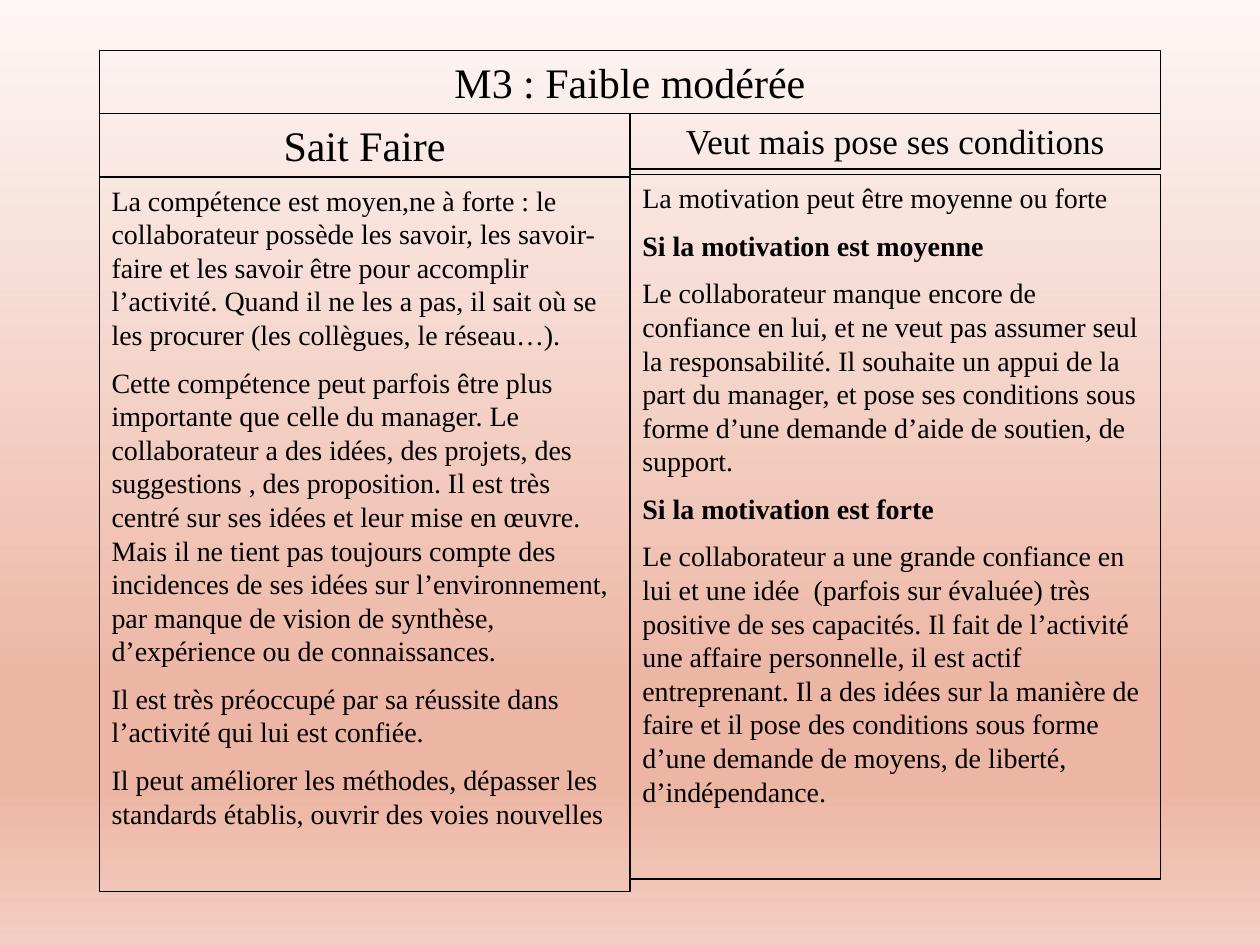
from lxml import etree
from pptx import Presentation, util as u
from pptx.enum import shapes, text
from pptx.dml.color import RGBColor
from pptx.oxml.ns import qn

COLORS = {"ink": "000000", "top": "FDF7F5", "band": "EDB5A4", "bottom": "F3CEC2"}
STOPS = [(0, "top"), (74, "band"), (83, "band"), (100, "bottom")]
FONT = "Times New Roman"

TITLE = "M3 : Faible modérée"
# Each column: heading, heading size, heading height, body top, body height, (text, bold) paragraphs
COLUMNS = [
    ("Sait Faire", 24, 1.28, 2.55, 14.4, [
        ("La compétence est moyen,ne à forte : le collaborateur possède les savoir, "
         "les savoir-faire et les savoir être pour accomplir l’activité. Quand il ne les a pas, "
         "il sait où se les procurer (les collègues, le réseau…).", False),
        ("Cette compétence peut parfois être plus importante que celle du manager. "
         "Le collaborateur a des idées, des projets, des suggestions , des proposition. "
         "Il est très centré sur ses idées et leur mise en œuvre. Mais il ne tient pas toujours "
         "compte des incidences de ses idées sur l’environnement, par manque de vision de "
         "synthèse, d’expérience ou de connaissances.", False),
        ("Il est très préoccupé par sa réussite dans l’activité qui lui est confiée.", False),
        ("Il peut améliorer les méthodes, dépasser les standards établis, "
         "ouvrir des voies nouvelles", False),
    ]),
    ("Veut mais pose ses conditions", 20, 1.12, 2.5, 14.2, [
        ("La motivation peut être moyenne ou forte", False),
        ("Si la motivation est moyenne", True),
        ("Le collaborateur manque encore de confiance en lui, et ne veut pas assumer seul "
         "la responsabilité. Il souhaite un appui de la part du manager, et pose ses conditions "
         "sous forme d’une demande d’aide de soutien, de support.", False),
        ("Si la motivation est forte", True),
        ("Le collaborateur a une grande confiance en lui et une idée  (parfois sur évaluée) très "
         "positive de ses capacités. Il fait de l’activité une affaire personnelle, il est actif "
         "entreprenant. Il a des idées sur la manière de faire et il pose des conditions sous "
         "forme d’une demande de moyens, de liberté, d’indépendance.", False),
    ]),
]


def paint_background(s):
    s.background.fill.gradient()
    grad = s.element.find(".//" + qn("a:gradFill"))
    stops = grad.find(qn("a:gsLst"))
    stops.clear()
    for pos, name in STOPS:
        gs = etree.SubElement(stops, qn("a:gs"), pos=str(pos * 1000))
        etree.SubElement(gs, qn("a:srgbClr"), val=COLORS[name])
    grad.find(qn("a:lin")).set("ang", "5400000")


def add_box(s, x, y, w, h, paragraphs, size, align):
    """Draw an outlined box holding (text, bold) paragraphs; lengths in cm."""
    sp = s.shapes.add_shape(shapes.MSO_SHAPE.RECTANGLE, *map(u.Cm, (x, y, w, h)))
    sp.shadow.inherit = False
    sp.fill.background()
    sp.line.color.rgb = RGBColor.from_string(COLORS["ink"])
    sp.line.width = u.Pt(0.75)
    tf = sp.text_frame
    tf.word_wrap = True
    tf.vertical_anchor = text.MSO_ANCHOR.TOP
    for i, (words, bold) in enumerate(paragraphs):
        p = tf.paragraphs[0] if i == 0 else tf.add_paragraph()
        p.alignment = align
        if i:
            p.space_before = u.Pt(size / 2)
        r = p.add_run()
        r.text = words
        for key, value in {"name": FONT, "size": u.Pt(size), "bold": bold}.items():
            setattr(r.font, key, value)
        r.font.color.rgb = RGBColor.from_string(COLORS["ink"])


def add_column(s, x, y, w, column):
    heading, size, head_h, body_y, body_h, body = column
    add_box(s, x, y, w, head_h, [(heading, False)], size, text.PP_ALIGN.CENTER)
    add_box(s, x, y + body_y - 1.27, w, body_h, body, 16, text.PP_ALIGN.LEFT)


def add_panel(s, x, y, w):
    # Title across both columns
    title_h = 1.27
    add_box(s, x, y, w, title_h, [(TITLE, False)], 24, text.PP_ALIGN.CENTER)
    # Competence and motivation columns
    col_w = w / len(COLUMNS)
    for i, column in enumerate(COLUMNS):
        add_column(s, x + i * col_w, y + title_h, col_w, column)


def main():
    prs = Presentation()
    prs.slide_width, prs.slide_height = u.Cm(25.4), u.Cm(19.05)
    s = prs.slides.add_slide(prs.slide_layouts[6])
    paint_background(s)
    add_panel(s, 2, 1.02, 21.4)
    prs.save("out.pptx")


if __name__ == "__main__":
    main()
